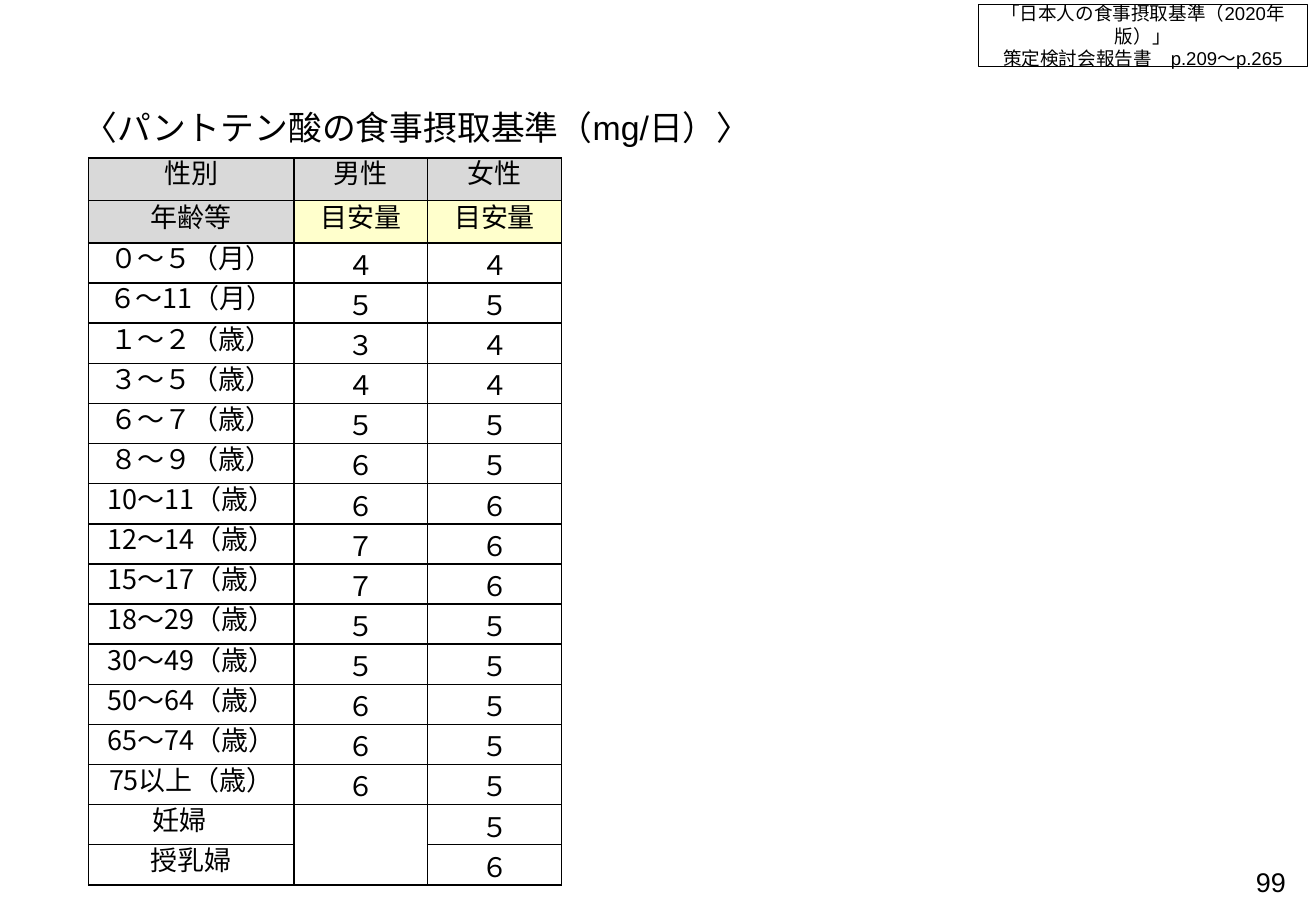
import pptx
import pptx.util
import pptx.dml.color
import pptx.enum.shapes
import pptx.enum.text
import pptx.oxml
import pptx.oxml.ns

TITLE = "〈パントテン酸の食事摂取基準（mg/日）〉"
SOURCE = ["「日本人の食事摂取基準（2020年版）」", "策定検討会報告書　p.209～p.265"]
PAGE_NUMBER = "99"
HEADER = [("性別", "男性", "女性"), ("年齢等", "目安量", "目安量")]
INTAKES = [
    ("０～５（月）", "４", "４"),
    ("６～11（月）", "５", "５"),
    ("１～２（歳）", "３", "４"),
    ("３～５（歳）", "４", "４"),
    ("６～７（歳）", "５", "５"),
    ("８～９（歳）", "６", "５"),
    ("10～11（歳）", "６", "６"),
    ("12～14（歳）", "７", "６"),
    ("15～17（歳）", "７", "６"),
    ("18～29（歳）", "５", "５"),
    ("30～49（歳）", "５", "５"),
    ("50～64（歳）", "６", "５"),
    ("65～74（歳）", "６", "５"),
    ("75以上（歳）", "６", "５"),
    ("妊婦", "", "５"),
    ("授乳婦", "", "６"),
]

PX = 9144  # 100 px to the inch
COLUMN_WIDTHS = [169, 110, 110]
TABLE_LEFT, TABLE_TOP, TABLE_HEIGHT, HEADER_HEIGHT = 73, 130, 514, 35

BLACK = pptx.dml.color.RGBColor(0x00, 0x00, 0x00)
WHITE = pptx.dml.color.RGBColor(0xFF, 0xFF, 0xFF)
GREY = pptx.dml.color.RGBColor(0xD9, 0xD9, 0xD9)
YELLOW = pptx.dml.color.RGBColor(0xFF, 0xFF, 0xCC)
LATIN_FONT, ASIAN_FONT = "Arial", "Noto Sans CJK JP"

ALIGN = pptx.enum.text.PP_ALIGN
MIDDLE = pptx.enum.text.MSO_ANCHOR.MIDDLE
TOP = pptx.enum.text.MSO_ANCHOR.TOP


def set_attributes(target, values):
    for name, value in values.items():
        setattr(target, name, value)


def write(paragraph, text, size, font_name, alignment):
    paragraph.alignment = alignment
    run = paragraph.add_run()
    run.text = text
    set_attributes(run.font, {"name": font_name, "size": pptx.util.Pt(size)})
    run.font.color.rgb = BLACK
    asian = pptx.oxml.parse_xml(
        f'<a:ea {pptx.oxml.ns.nsdecls("a")} typeface="{ASIAN_FONT}"/>')
    run.font._element.find(pptx.oxml.ns.qn("a:latin")).addnext(asian)


def write_lines(shape, lines, size, alignment, anchor):
    set_attributes(shape.text_frame, {"word_wrap": True, "vertical_anchor": anchor})
    for index, line in enumerate(lines):
        frame = shape.text_frame
        paragraph = frame.add_paragraph() if index else frame.paragraphs[0]
        write(paragraph, line, size, LATIN_FONT, alignment)


def add_borders(cell):
    properties = cell._tc.get_or_add_tcPr()
    for index, side in enumerate(("lnL", "lnR", "lnT", "lnB")):
        properties.insert(index, pptx.oxml.parse_xml(
            f'<a:{side} {pptx.oxml.ns.nsdecls("a")} w="12700"><a:solidFill>'
            f'<a:srgbClr val="{BLACK}"/></a:solidFill></a:{side}>'))


def format_cell(cell, row, column, text):
    is_header = row < len(HEADER)
    is_label = is_header or column == 0
    side, top = (5, 0) if is_label else (1, 1)
    set_attributes(cell, {
        "vertical_anchor": MIDDLE,
        "margin_left": side * PX, "margin_right": side * PX,
        "margin_top": top * PX, "margin_bottom": 0})
    if text == "妊婦":
        cell.margin_right = 25 * PX
    if is_header:
        cell.fill.solid()
        cell.fill.fore_color.rgb = YELLOW if row and column else GREY
    else:
        cell.fill.background()
    add_borders(cell)
    paragraph = cell.text_frame.paragraphs[0]
    if is_label:
        paragraph.line_spacing = pptx.util.Pt(16 if row else 14)
    if text:
        write(paragraph, text, 16, ASIAN_FONT, ALIGN.CENTER)


def add_intake_table(slide):
    rows = HEADER + INTAKES
    table = slide.shapes.add_table(
        len(rows), len(COLUMN_WIDTHS), TABLE_LEFT * PX, TABLE_TOP * PX,
        sum(COLUMN_WIDTHS) * PX, TABLE_HEIGHT * PX).table
    set_attributes(table, {"first_row": False, "horz_banding": False})
    for column, width in zip(table.columns, COLUMN_WIDTHS):
        column.width = width * PX
    body_height = (TABLE_HEIGHT - HEADER_HEIGHT * len(HEADER)) * PX // len(INTAKES)
    for row, texts in enumerate(rows):
        table.rows[row].height = HEADER_HEIGHT * PX if row < len(HEADER) else body_height
        for column, text in enumerate(texts):
            format_cell(table.cell(row, column), row, column, text)
    table.cell(len(rows) - 2, 1).merge(table.cell(len(rows) - 1, 1))


def main():
    presentation = pptx.Presentation()
    set_attributes(presentation, {"slide_width": 1083 * PX, "slide_height": 750 * PX})
    slide = presentation.slides.add_slide(presentation.slide_layouts[6])

    add_intake_table(slide)

    title = slide.shapes.add_textbox(59 * PX, 83 * PX, 965 * PX, 44 * PX)
    write_lines(title, [TITLE], 20, ALIGN.JUSTIFY, TOP)
    number = slide.shapes.add_textbox(815 * PX, 706 * PX, 253 * PX, 40 * PX)
    write_lines(number, [PAGE_NUMBER], 16, ALIGN.RIGHT, MIDDLE)

    source = slide.shapes.add_shape(
        pptx.enum.shapes.MSO_SHAPE.RECTANGLE, 805 * PX, 4 * PX, 271 * PX, 51 * PX)
    source.shadow.inherit = False
    source.fill.solid()
    source.fill.fore_color.rgb = WHITE
    source.line.color.rgb = BLACK
    source.line.width = pptx.util.Pt(0.75)
    write_lines(source, SOURCE, 11, ALIGN.CENTER, MIDDLE)

    presentation.save("out.pptx")


if __name__ == "__main__":
    main()
